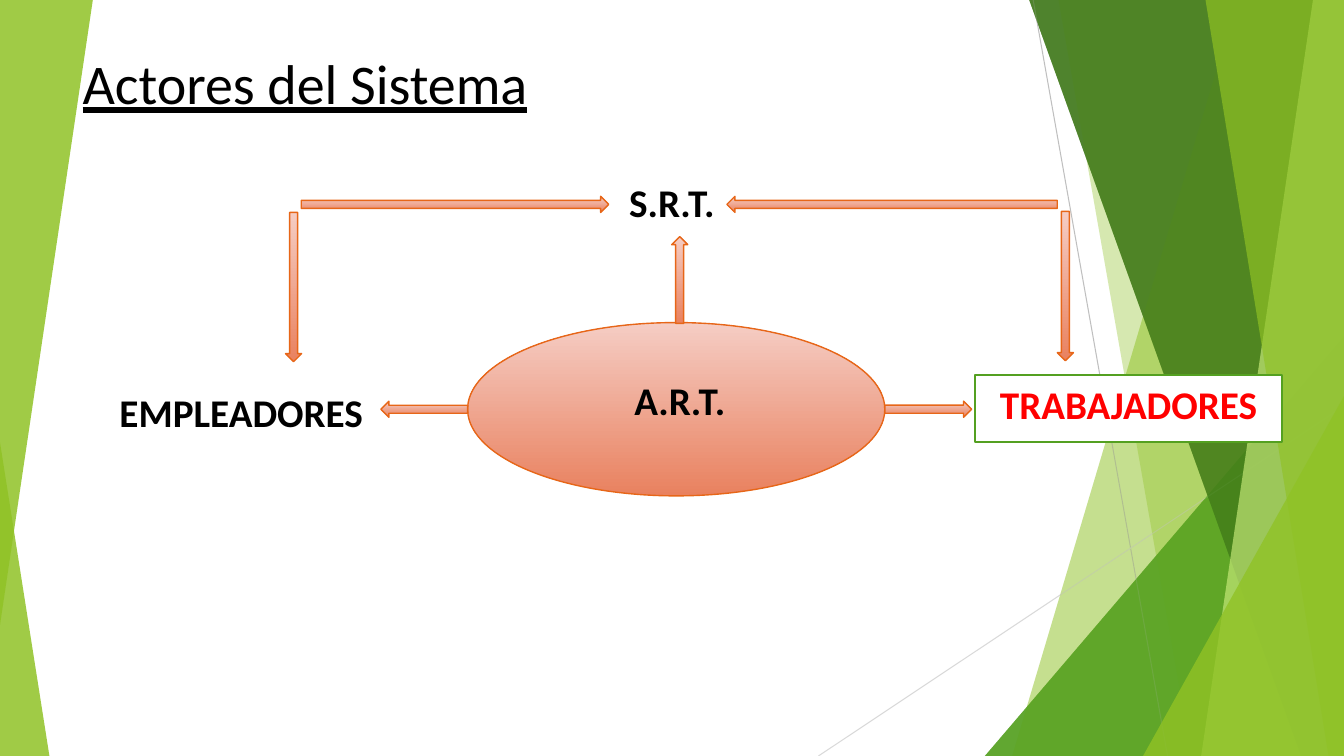
from lxml import etree
from pptx import Presentation
from pptx import util as u
from pptx.dml import color
from pptx.enum import shapes, text
from pptx.oxml import ns

RGB = color.RGBColor
GREEN = RGB(0x90, 0xC2, 0x26)
LEAF = RGB(0x54, 0xA0, 0x21)
DARK = RGB(0x3F, 0x78, 0x19)
LIME = RGB(0xC0, 0xE4, 0x74)
GREY = RGB(0xBF, 0xBF, 0xBF)
PALE = RGB(0xD9, 0xD9, 0xD9)
CORAL = RGB(0xE9, 0x81, 0x5F)
PINK = RGB(0xF5, 0xCD, 0xC4)
RUST = RGB(0xE7, 0x66, 0x18)
WHITE = RGB(255, 255, 255)
BLACK = RGB(0, 0, 0)
RED = RGB(255, 0, 0)

WIDE, HIGH = 960, 540
KIND = shapes.MSO_SHAPE
HEAD = {"name": "Calibri", "size": u.Pt(40), "bold": False, "underline": True}
LABEL = {"name": "Calibri", "size": u.Pt(28), "bold": True}


class Page:
    """Style and current slide; all lengths are points."""

    def __init__(self, deck):
        self.slide = deck.slides.add_slide(deck.slide_layouts[5])
        self.items = self.slide.shapes

    def tint(self, item, hue, alpha):
        item.shadow.inherit = False
        item.line.fill.background()
        item.fill.solid()
        item.fill.fore_color.rgb = hue
        node = item._element.spPr.find(".//" + ns.qn("a:srgbClr"))
        etree.SubElement(node, ns.qn("a:alpha"), val=str(alpha * 1000))

    def facet(self, top, base, hue, alpha):
        """Panel with a slanted left side, reaching the right edge."""
        rim = [(u.Pt(x), u.Pt(y)) for x, y in
               ((top, -0.6), (WIDE, -0.6), (WIDE, HIGH), (base, HIGH))]
        pen = self.items.build_freeform(*rim[0])
        pen.add_line_segments(rim[1:], close=True)
        self.tint(pen.convert_to_shape(), hue, alpha)

    def wedge(self, box, tip, hue, alpha, turn=0):
        item = self.items.add_shape(KIND.ISOSCELES_TRIANGLE, *map(u.Pt, box))
        item.adjustments[0] = tip
        item.rotation = turn
        self.tint(item, hue, alpha)

    def line(self, start, end, hue):
        item = self.items.add_connector(
            shapes.MSO_CONNECTOR.STRAIGHT, *map(u.Pt, start + end))
        item.line.color.rgb = hue
        item.line.width = u.Pt(0.75)
        etree.SubElement(item._element.spPr, ns.qn("a:effectLst"))

    def glow(self, kind, box, turn=0):
        """Shape whose gradient stays upright when it is turned."""
        item = self.items.add_shape(kind, *map(u.Pt, box))
        item.shadow.inherit = False
        item.rotation = turn
        item.fill.gradient()
        item.fill.gradient_angle = (90 + turn) % 360
        for stop, hue in zip(item.fill.gradient_stops, (CORAL, PINK)):
            stop.color.rgb = hue
        item.line.color.rgb = RUST
        item.line.width = u.Pt(1)

    def arrow(self, mid, size, turn):
        x, y = mid
        thick = 11.5
        box = (x - size / 2, y - thick / 2, size, thick)
        self.glow(KIND.RIGHT_ARROW, box, turn)

    def letter(self, item, words, form, hue, align):
        frame = item.text_frame
        frame.word_wrap = True
        frame.auto_size = text.MSO_AUTO_SIZE.NONE
        frame.vertical_anchor = text.MSO_ANCHOR.TOP
        para = frame.paragraphs[0]
        para.alignment = align
        run = para.add_run()
        run.text = words
        for key, val in form.items():
            setattr(run.font, key, val)
        run.font.color.rgb = hue
        return para

    def label(self, words, box, hue=BLACK, edge=None):
        spot = tuple(map(u.Pt, box))
        if edge is None:
            item = self.items.add_textbox(*spot)
        else:
            item = self.items.add_shape(KIND.RECTANGLE, *spot)
            item.shadow.inherit = False
            item.fill.solid()
            item.fill.fore_color.rgb = WHITE
            item.line.color.rgb = edge
            item.line.width = u.Pt(1.5)
        para = self.letter(item, words, LABEL, hue, text.PP_ALIGN.CENTER)
        para.space_before = u.Pt(5.6)

    def title(self, words, box):
        item = self.items.title
        for key, val in zip(("left", "top", "width", "height"), box):
            setattr(item, key, u.Pt(val))
        self.letter(item, words, HEAD, BLACK, text.PP_ALIGN.LEFT)
        # Bring to front
        tree = item._element.getparent()
        tree.append(item._element)


def panels(page):
    """Layered green panels on the right."""
    page.facet(884, 723, GREEN, 30)
    page.facet(756, 851, GREEN, 20)
    page.wedge((703.5, 240, 256.5, 300), 1, LEAF, 72)
    page.facet(735, 929.5, DARK, 70)
    page.facet(938, 858, LIME, 70)
    page.facet(861, 949, GREEN, 65)
    page.wedge((816.5, 283, 143.5, 257), 1, GREEN, 80)


def main():
    deck = Presentation()
    deck.slide_width, deck.slide_height = u.Pt(WIDE), u.Pt(HIGH)
    page = Page(deck)

    # Backdrop: two layers of panels with thin lines between
    panels(page)
    page.wedge((0, 316, 35.3, 224), 0, GREEN, 85)
    page.line((738, 0), (834, HIGH), GREY)
    page.line((WIDE, 290), (584.6, HIGH), PALE)
    panels(page)
    page.wedge((0, 0, 66.3, 446.4), 1, GREEN, 85, 180)

    # Actors
    page.glow(KIND.OVAL, (334, 230.4, 298, 123.8))
    page.label("TRABAJADORES", (696.3, 267.8, 219.6, 48.2), RED, LEAF)
    page.label("S.R.T.", (362, 123.8, 236, 48.2))
    page.label("A.R.T.", (404, 265, 163.4, 48.2))
    page.label("EMPLEADORES", (56, 273.6, 232.6, 44.6))

    # Arrows: centre, length, turn
    for mid, size, turn in (
        ((303, 292.3), 62, 180),
        ((663, 292.3), 62, 0),
        ((485.5, 200), 62, 270),
        ((637.2, 146), 236, 180),
        ((325, 146), 219.6, 0),
        ((209.7, 205), 106.6, 90),
        ((761, 204.3), 106.6, 90),
    ):
        page.arrow(mid, size, turn)

    # Title
    page.title("Actores del Sistema", (51.8, 31, 491, 55.4))
    deck.save("out.pptx")


if __name__ == "__main__":
    main()
